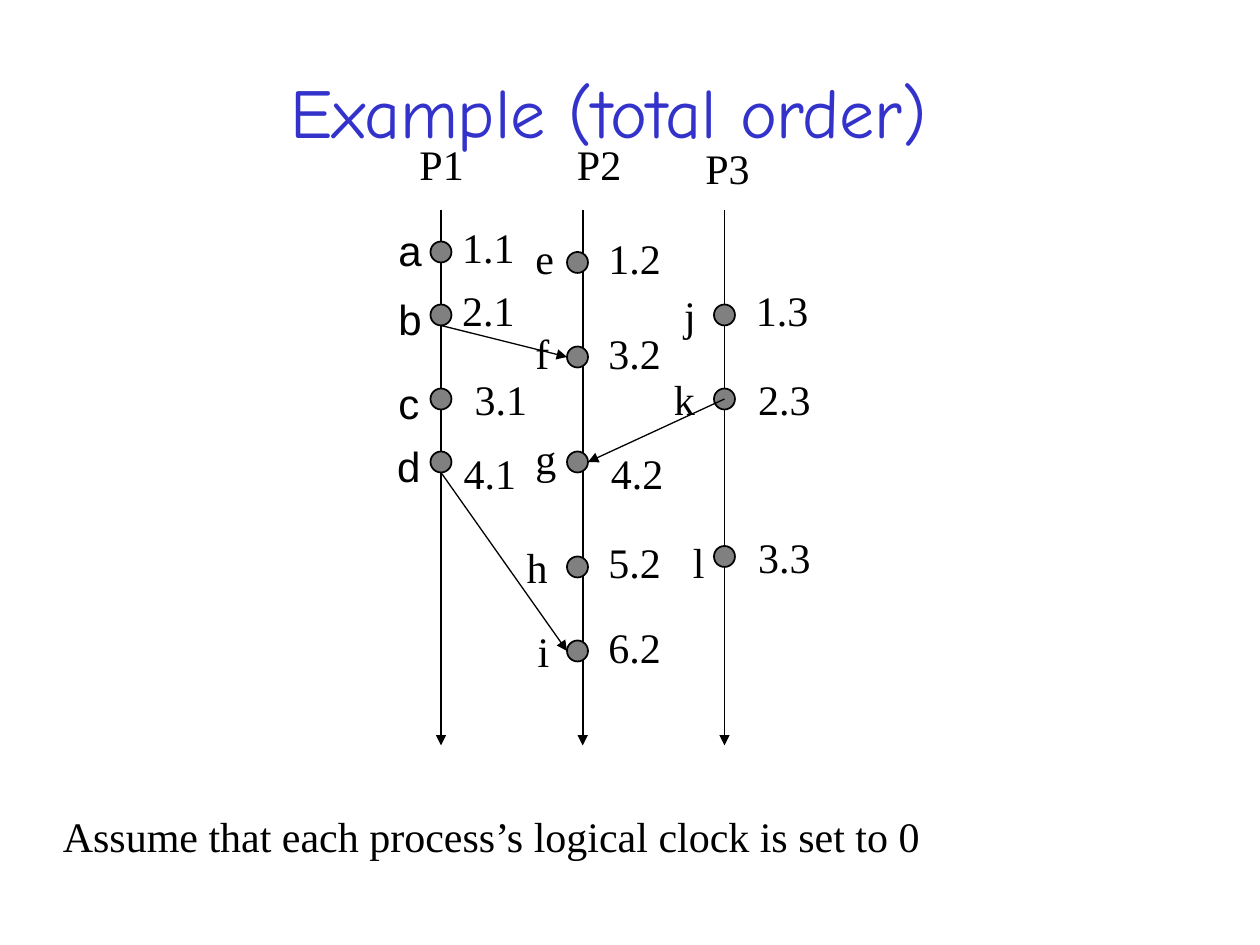
import pptx
import pptx.dml.color
import pptx.enum.shapes
import pptx.enum.text
import pptx.oxml
import pptx.oxml.ns
import pptx.util
from dataclasses import dataclass

Pt = pptx.util.Pt
ALIGN = pptx.enum.text.PP_ALIGN
ANCHOR = pptx.enum.text.MSO_ANCHOR


@dataclass(frozen=True)
class Theme:
    title_color: str = "3333CC"
    ink: str = "000000"
    dot_fill: str = "808080"
    title_font: str = "Comic Neue"
    body_font: str = "Times New Roman"
    label_font: str = "Arial"
    title_size: float = 40
    body_size: float = 24
    timeline_width: float = 1
    message_width: float = 0.75


THEME = Theme()
DOT = 12
TEXT_HEIGHT = 36
CLOCK_WIDTH = 44.6
TIMELINE_TOP, TIMELINE_BOTTOM = 120, 426

# Process: timeline x, heading left, heading top
PROCESSES = {
    "P1": (252, 232.6, 75.6),
    "P2": (333, 322.6, 75.6),
    "P3": (414, 396, 77.8),
}

# Dot centre x, label font, label alignment and label anchor for each process
EVENT_STYLES = {
    "P1": (252, THEME.label_font, ALIGN.CENTER, ANCHOR.MIDDLE),
    "P2": (330, THEME.body_font, ALIGN.LEFT, ANCHOR.TOP),
    "P3": (414, THEME.body_font, ALIGN.LEFT, ANCHOR.TOP),
}

# Event, process, dot centre y, label (left, top, width), clock, clock (left, top)
EVENTS = [
    ("a", "P1", 144, (220.3, 124.6, 28), "1.1", (257, 123.1)),
    ("b", "P1", 180, (220.3, 164.2, 28), "2.1", (257, 159.1)),
    ("c", "P1", 228, (220.3, 212.4, 26.6), "3.1", (264.2, 210.2)),
    ("d", "P1", 264, (219.6, 248.4, 28), "4.1", (257.8, 252)),
    ("e", "P2", 150, (298.8, 129.6, 25.2), "1.2", (340.6, 129.6)),
    ("f", "P2", 204, (298.8, 183.6, 22.3), "3.2", (340.6, 183.6)),
    ("g", "P2", 264, (298.8, 243.4, 26.6), "4.2", (342, 252)),
    ("h", "P2", 324, (293.8, 306, 26.6), "5.2", (340.6, 303.1)),
    ("i", "P2", 372, (300.2, 354.2, 20.9), "6.2", (340.6, 351.4)),
    ("j", "P3", 180, (383.8, 162, 20.9), "1.3", (424.8, 159.1)),
    ("k", "P3", 228, (378, 210.2, 26.6), "2.3", (426.2, 210.2)),
    ("l", "P3", 318, (388.8, 303.1, 20.9), "3.3", (426.2, 300.2)),
]

# Sender, receiver, and the offsets from their dot centres
MESSAGES = [
    ("b", "f", (0, DOT / 2), (-DOT / 2, 0)),
    ("k", "g", (0, 0), (DOT / 2, 0)),
    ("d", "i", (0, DOT / 2), (-DOT / 2, 0)),
]


def rgb(color):
    return pptx.dml.color.RGBColor.from_string(color)


def add_text(slide, text, left, top, width, height=TEXT_HEIGHT, *,
             font=THEME.body_font, size=THEME.body_size, color=THEME.ink,
             align=ALIGN.LEFT, anchor=ANCHOR.TOP, wrap=False):
    shape = slide.shapes.add_textbox(Pt(left), Pt(top), Pt(width), Pt(height))
    frame = shape.text_frame
    frame.word_wrap = wrap
    frame.vertical_anchor = anchor
    paragraph = frame.paragraphs[0]
    paragraph.alignment = align
    run = paragraph.add_run()
    run.text = text
    run.font.name = font
    run.font.size = Pt(size)
    run.font.color.rgb = rgb(color)


def add_arrow(slide, start, end, width):
    connector = slide.shapes.add_connector(
        pptx.enum.shapes.MSO_CONNECTOR.STRAIGHT,
        *(Pt(value) for value in (*start, *end)))
    connector.line.color.rgb = rgb(THEME.ink)
    connector.line.width = Pt(width)
    # Arrowhead at the end, and no shadow
    qn = pptx.oxml.ns.qn
    line = connector.line._get_or_add_ln()
    line.append(line.makeelement(qn("a:tailEnd"), {"type": "triangle"}))
    properties = connector._element.spPr
    properties.append(properties.makeelement(qn("a:effectLst"), {}))


def add_dot(slide, center_x, center_y):
    shape = slide.shapes.add_shape(
        pptx.enum.shapes.MSO_SHAPE.OVAL, Pt(center_x - DOT / 2),
        Pt(center_y - DOT / 2), Pt(DOT), Pt(DOT))
    shape.shadow.inherit = False
    shape.fill.solid()
    shape.fill.fore_color.rgb = rgb(THEME.dot_fill)
    shape.line.color.rgb = rgb(THEME.ink)
    shape.line.width = Pt(THEME.timeline_width)


def main():
    presentation = pptx.Presentation()
    presentation.slide_width, presentation.slide_height = Pt(720), Pt(540)
    slide = presentation.slides.add_slide(presentation.slide_layouts[6])

    # Title
    add_text(slide, "Example (total order)", 41.8, 18, 612, 90,
             font=THEME.title_font, size=THEME.title_size,
             color=THEME.title_color, align=ALIGN.CENTER,
             anchor=ANCHOR.MIDDLE, wrap=True)

    # Process timelines
    for name, (x, left, top) in PROCESSES.items():
        add_arrow(slide, (x, TIMELINE_TOP), (x, TIMELINE_BOTTOM),
                  THEME.timeline_width)
        add_text(slide, name, left, top, 39.6)

    # Events with their names and clock values
    centers = {}
    for event, process, y, label_box, clock, clock_position in EVENTS:
        x, font, align, anchor = EVENT_STYLES[process]
        centers[event] = (x, y)
        add_dot(slide, x, y)
        add_text(slide, event, *label_box, font=font, align=align, anchor=anchor)
        add_text(slide, clock, *clock_position, CLOCK_WIDTH)

    # Messages between processes
    for sender, receiver, *offsets in MESSAGES:
        start, end = (
            (centers[event][0] + dx, centers[event][1] + dy)
            for event, (dx, dy) in zip((sender, receiver), offsets))
        add_arrow(slide, start, end, THEME.message_width)

    # Assumption
    add_text(slide, "Assume that each process’s logical clock is set to 0",
             28.8, 459.4, 505.4)

    presentation.save("out.pptx")


if __name__ == "__main__":
    main()
